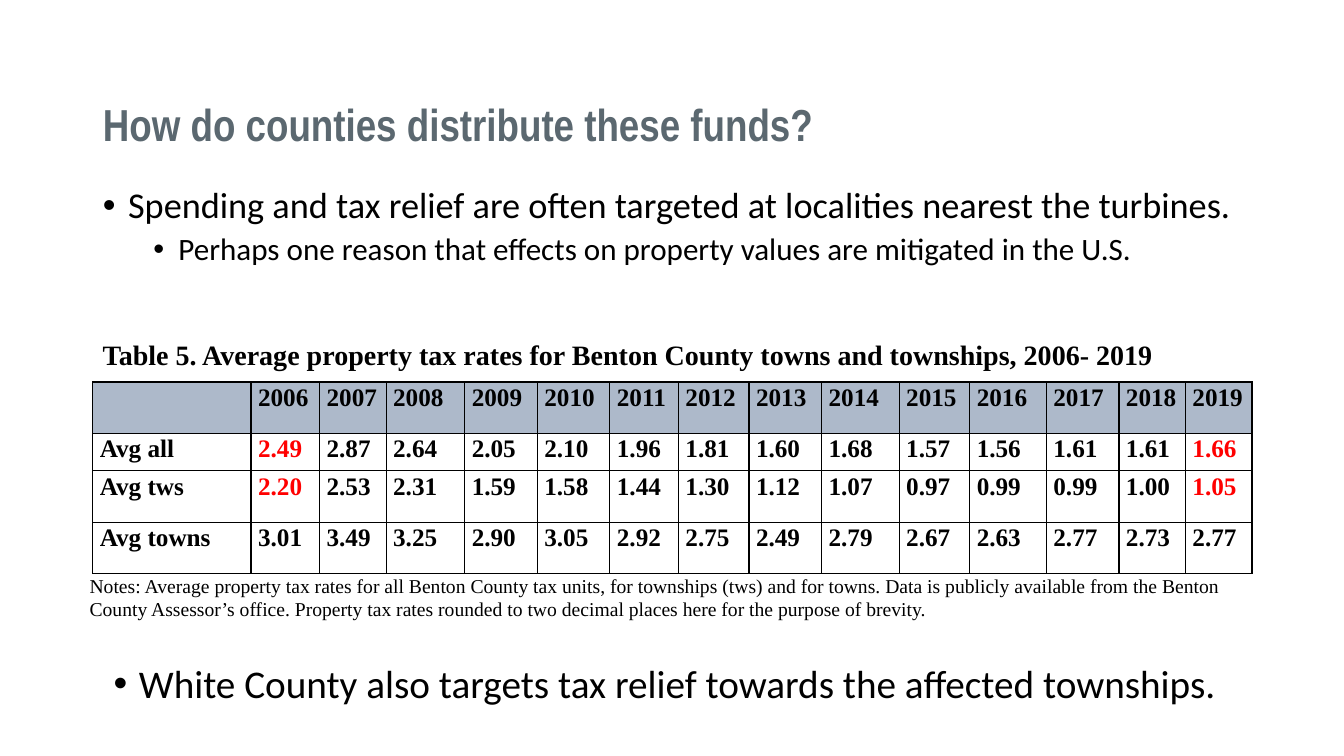
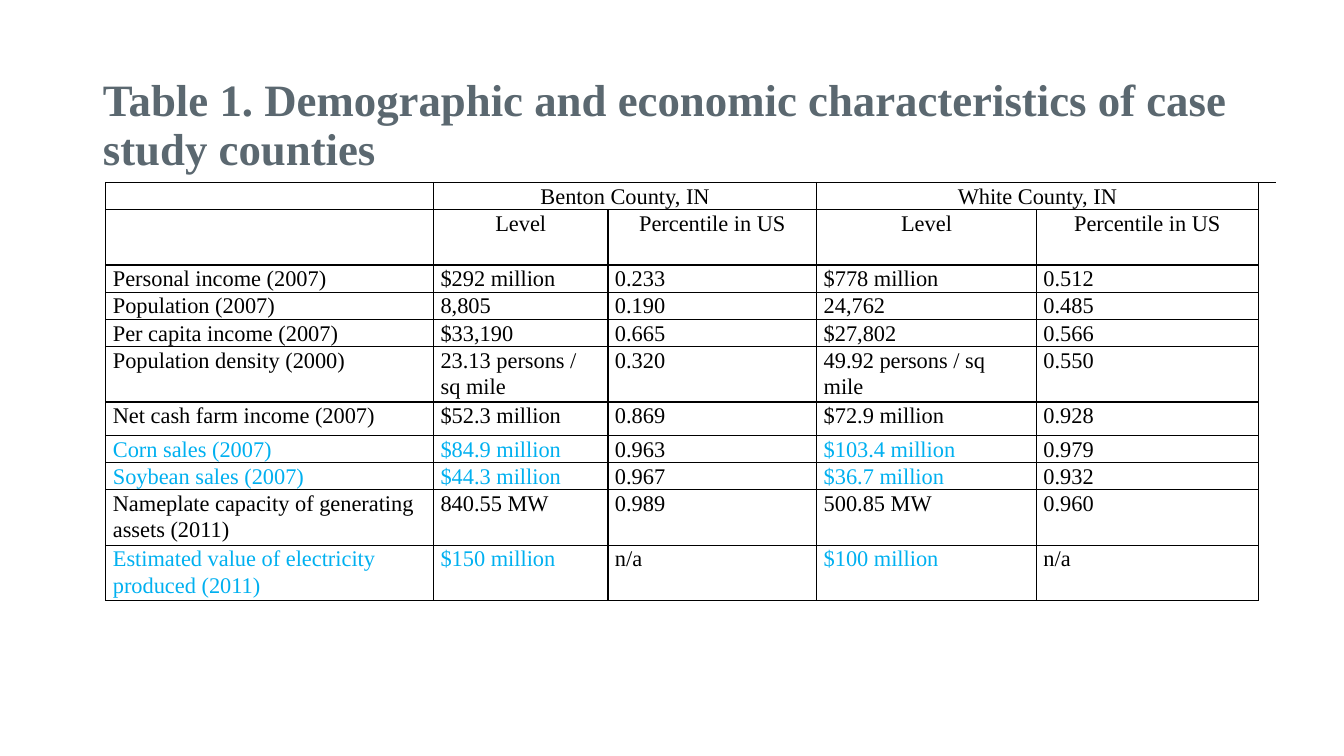
"""Build two slides on county tax rates and county characteristics."""
from lxml.etree import SubElement
from pptx import Presentation
from pptx.dml.color import RGBColor
from pptx.enum.text import MSO_ANCHOR, MSO_AUTO_SIZE, PP_ALIGN
from pptx.oxml.ns import qn
from pptx.util import Inches, Pt

BLACK, WHITE, SLATE = "000000", "FFFFFF", "5B6870"
HEADER_BLUE, RED, CYAN = "ADB9CA", "FF0000", "00B0F0"
SERIF, SANS, NARROW = "Times New Roman", "Calibri", "Arial Narrow"
LEFT, WIDTH = 0.92, 11.5

FUNDS_TITLE = "How do counties distribute these funds?"
FUNDS_BULLETS = [
    ("Spending and tax relief are often targeted at localities nearest the turbines.", 0, 25.9),
    ("Perhaps one reason that effects on property values are mitigated in the U.S.", 1, 22.2),
]
RATES_CAPTION = "Table 5. Average property tax rates for Benton County towns and townships, 2006- 2019"
RATES = [
    [""] + [str(year) for year in range(2006, 2020)],
    ["Avg all", "2.49", "2.87", "2.64", "2.05", "2.10", "1.96", "1.81", "1.60",
     "1.68", "1.57", "1.56", "1.61", "1.61", "1.66"],
    ["Avg tws", "2.20", "2.53", "2.31", "1.59", "1.58", "1.44", "1.30", "1.12",
     "1.07", "0.97", "0.99", "0.99", "1.00", "1.05"],
    ["Avg towns", "3.01", "3.49", "3.25", "2.90", "3.05", "2.92", "2.75", "2.49",
     "2.79", "2.67", "2.63", "2.77", "2.73", "2.77"],
]
RATES_WIDTHS = [1.57, 0.68, 0.66, 0.78, 0.72, 0.72, 0.68, 0.7, 0.72, 0.77, 0.7, 0.76, 0.72, 0.66, 0.66]
RATES_HEIGHTS = [0.51, 0.37, 0.51, 0.51]
RED_ROWS, RED_YEARS = ("Avg all", "Avg tws"), ("2006", "2019")
RATES_NOTES = (
    "Notes: Average property tax rates for all Benton County tax units, for townships (tws) "
    "and for towns. Data is publicly available from the Benton County Assessor’s office. "
    "Property tax rates rounded to two decimal places here for the purpose of brevity."
)
WHITE_COUNTY = "White County also targets tax relief towards the affected townships."

COUNTIES_TITLE = "Table 1. Demographic and economic characteristics of case study counties"
COUNTIES = [
    [""] * 6,
    ["", "Benton County, IN", "", "White County, IN", "", ""],
    ["", "Level", "Percentile in US", "Level", "Percentile in US", ""],
    ["Personal income (2007)", "$292 million", "0.233", "$778 million", "0.512", ""],
    ["Population (2007)", "8,805", "0.190", "24,762", "0.485", ""],
    ["Per capita income (2007)", "$33,190", "0.665", "$27,802", "0.566", ""],
    ["Population density (2000)", "23.13 persons / sq mile", "0.320",
     "49.92 persons / sq mile", "0.550", ""],
    ["Net cash farm income (2007)", "$52.3 million", "0.869", "$72.9 million", "0.928", ""],
    ["Corn sales (2007)", "$84.9 million", "0.963", "$103.4 million", "0.979", ""],
    ["Soybean sales (2007)", "$44.3 million", "0.967", "$36.7 million", "0.932", ""],
    ["Nameplate capacity of generating assets (2011)", "840.55 MW", "0.989", "500.85 MW", "0.960", ""],
    ["Estimated value of electricity produced (2011)", "$150 million", "n/a", "$100 million", "n/a", ""],
]
COUNTIES_WIDTHS = [3.25, 1.73, 2.07, 2.18, 2.2, 0.17]
COUNTIES_HEIGHTS = [0.27, 0.27, 0.55, 0.27, 0.27, 0.27, 0.55, 0.33, 0.27, 0.27, 0.55, 0.55]
COUNTIES_MERGES = [((0, 0), (0, 5)), ((1, 1), (1, 2)), ((1, 3), (1, 4))]
CYAN_STARTS, CYAN_COLUMNS = ("Corn", "Soybean", "Estimated"), (0, 1, 3)


def color(hex_text):
    return RGBColor.from_string(hex_text)


def place(shape, left, top, width, height):
    shape.left, shape.top = Inches(left), Inches(top)
    shape.width, shape.height = Inches(width), Inches(height)


def style(paragraph, size, face, ink=BLACK, bold=False, align=PP_ALIGN.LEFT, spacing=0.9, after=0):
    paragraph.alignment = align
    paragraph.line_spacing = spacing
    paragraph.space_after = Pt(after)
    font = paragraph.font
    font.size, font.name, font.bold = Pt(size), face, bold
    font.color.rgb = color(ink)


def add_bullet(paragraph, level=0):
    paragraph.level = level
    paragraph.space_before = Pt(5 if level else 0)
    properties = paragraph._p.get_or_add_pPr()
    properties.set("marL", str(Inches(0.25 + 0.5 * level)))
    properties.set("indent", str(Inches(-0.25)))
    SubElement(properties, qn("a:buFont")).set("typeface", "Arial")
    SubElement(properties, qn("a:buChar")).set("char", "•")


def add_titled_slide(deck, layout, title, face):
    slide = deck.slides.add_slide(deck.slide_layouts[layout])
    heading = slide.shapes.title
    place(heading, LEFT, 0.66, WIDTH, 1.19)
    frame = heading.text_frame
    frame.text = title
    frame.auto_size = MSO_AUTO_SIZE.NONE
    frame.vertical_anchor = MSO_ANCHOR.MIDDLE
    style(frame.paragraphs[0], 32, face, SLATE, bold=True)
    return slide


def add_text(slide, text, left, top, height, autosize=MSO_AUTO_SIZE.SHAPE_TO_FIT_TEXT):
    box = slide.shapes.add_textbox(Inches(left), Inches(top), Inches(WIDTH), Inches(height))
    frame = box.text_frame
    frame.word_wrap = True
    frame.auto_size = autosize
    frame.text = text
    return frame.paragraphs[0]


def set_borders(cell, sides):
    properties = cell._tc.get_or_add_tcPr()
    for side in "LRTB":
        line = SubElement(properties, qn(f"a:ln{side}"), w=str(Pt(1)))
        if side in sides:
            fill = SubElement(line, qn("a:solidFill"))
            SubElement(fill, qn("a:srgbClr")).set("val", BLACK)
        else:
            SubElement(line, qn("a:noFill"))


def add_grid(slide, rows, widths, heights, left, top, cell_look):
    table = slide.shapes.add_table(
        len(rows), len(widths), Inches(left), Inches(top),
        Inches(sum(widths)), Inches(sum(heights))).table
    table.first_row = table.horz_banding = False
    for column, width in zip(table.columns, widths):
        column.width = Inches(width)
    for r, (row, height) in enumerate(zip(rows, heights)):
        table.rows[r].height = Inches(height)
        for c, text in enumerate(row):
            cell = table.cell(r, c)
            cell.margin_left = cell.margin_right = Inches(0.07)
            cell.margin_top = cell.margin_bottom = 0
            sides, fill, text_look = cell_look(r, c)
            set_borders(cell, sides)
            if fill:
                cell.fill.solid()
                cell.fill.fore_color.rgb = color(fill)
            else:
                cell.fill.background()
            cell.text = text
            style(cell.text_frame.paragraphs[0], face=SERIF, spacing=1.07, **text_look)
    return table


def rates_look(r, c):
    red = RATES[r][0] in RED_ROWS and RATES[0][c] in RED_YEARS
    text_look = dict(size=18, ink=RED if red else BLACK, bold=True, after=8)
    return "LRTB", WHITE if r else HEADER_BLUE, text_look


def counties_look(r, c):
    if r == 0:
        sides = "B"
    elif c == len(COUNTIES_WIDTHS) - 1:
        sides = "LT" if r == 1 else "L"
    else:
        sides = "LRTB"
    cyan = COUNTIES[r][0].startswith(CYAN_STARTS) and c in CYAN_COLUMNS
    align = PP_ALIGN.CENTER if r < 3 else PP_ALIGN.LEFT
    return sides, None, dict(size=16, ink=CYAN if cyan else BLACK, align=align)


def build_funds_slide(deck):
    slide = add_titled_slide(deck, 1, FUNDS_TITLE, NARROW)
    body = slide.placeholders[1]
    place(body, LEFT, 1.81, WIDTH, 1.01)
    frame = body.text_frame
    frame.auto_size = MSO_AUTO_SIZE.NONE
    for i, (text, level, size) in enumerate(FUNDS_BULLETS):
        paragraph = frame.add_paragraph() if i else frame.paragraphs[0]
        paragraph.text = text
        add_bullet(paragraph, level)
        style(paragraph, size, SANS)

    add_grid(slide, RATES, RATES_WIDTHS, RATES_HEIGHTS, LEFT, 3.79, rates_look)
    caption = add_text(slide, RATES_CAPTION, LEFT, 3.28, 0.44)
    style(caption, 20, SERIF, bold=True, align=PP_ALIGN.JUSTIFY, spacing=1.07, after=6)
    notes = add_text(slide, RATES_NOTES, 0.79, 5.64, 0.57)
    style(notes, 14, SERIF, spacing=1.0)
    white_county = add_text(slide, WHITE_COUNTY, 1.03, 6.54, 0.57, MSO_AUTO_SIZE.NONE)
    add_bullet(white_county)
    style(white_county, 28, SANS)


def build_counties_slide(deck):
    slide = add_titled_slide(deck, 5, COUNTIES_TITLE, SERIF)
    table = add_grid(slide, COUNTIES, COUNTIES_WIDTHS, COUNTIES_HEIGHTS, 1.05, 1.54, counties_look)
    for first, last in COUNTIES_MERGES:
        table.cell(*first).merge(table.cell(*last))


def main():
    deck = Presentation()
    deck.slide_width, deck.slide_height = Inches(13.33), Inches(7.5)
    build_funds_slide(deck)
    build_counties_slide(deck)
    deck.save("out.pptx")


if __name__ == "__main__":
    main()
